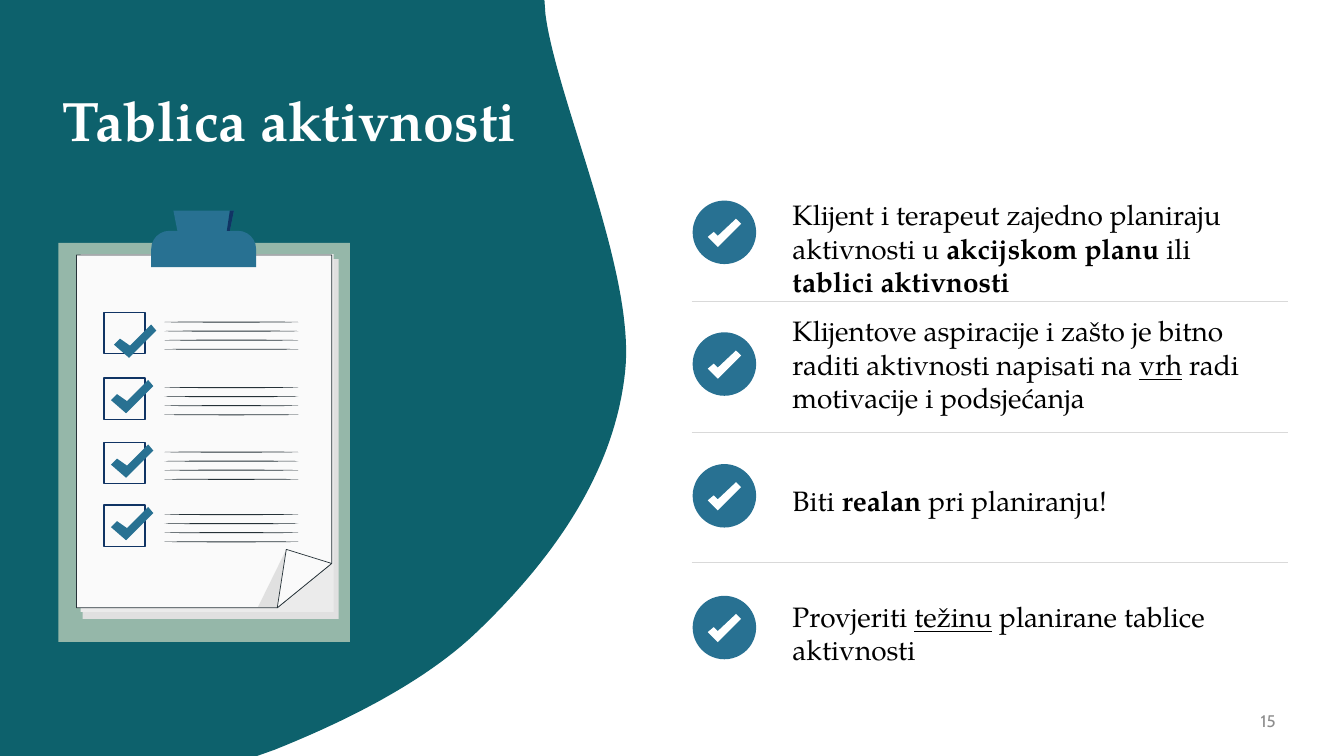
from lxml.etree import SubElement
from pptx import Presentation
from pptx.dml.color import RGBColor
from pptx.enum.shapes import MSO_CONNECTOR, MSO_SHAPE
from pptx.enum.text import MSO_ANCHOR, PP_ALIGN
from pptx.oxml.ns import qn
from pptx.util import Inches, Pt

TEAL, BLUE, NAVY, INK = "0D616C", "287192", "103464", "263238"
WHITE, PAPER = "FFFFFF", "FAFAFA"
SERIF = "TeX Gyre Pagella"


def paint(shape, fill=None, line=None, width=0.5):
    """Set fill and outline, with no shadow; None means no fill or no line."""
    shape.shadow.inherit = False
    if fill:
        shape.fill.solid()
        shape.fill.fore_color.rgb = RGBColor.from_string(fill)
    else:
        shape.fill.background()
    if line:
        shape.line.color.rgb = RGBColor.from_string(line)
        shape.line.width = Pt(width)
    else:
        shape.line.fill.background()


def add_polygon(shapes, points, fill, line=None, left=0, top=0):
    """Draw a closed outline from points in inches, moved by left and top."""
    corners = [(Inches(left + x), Inches(top + y)) for x, y in points]
    builder = shapes.build_freeform(*corners[0])
    builder.add_line_segments(corners[1:], close=True)
    paint(builder.convert_to_shape(), fill, line)


prs = Presentation()
prs.slide_width, prs.slide_height = Inches(13.33), Inches(7.5)
slide = prs.slides.add_slide(prs.slide_layouts[5])
shapes = slide.shapes

# Teal panel with a curved right edge
edge = [(0, 0), (5.4, 0), (5.41, 0.14)]
curves = [
    ((5.52, 0.99), (6.31, 2.71), (6.2, 3.69)),
    ((6.09, 4.74), (5.42, 5.61), (4.73, 6.27)),
    ((4.21, 6.77), (3.42, 7.16), (2.72, 7.44)),
]
STEPS = 40
for control_1, control_2, end in curves:
    start = edge[-1]
    for step in range(1, STEPS + 1):
        t = step / STEPS
        edge.append(tuple(
            (1 - t) ** 3 * a + 3 * (1 - t) ** 2 * t * b + 3 * (1 - t) * t ** 2 * c + t ** 3 * d
            for a, b, c, d in zip(start, control_1, control_2, end)))
add_polygon(shapes, edge + [(2.55, 7.5), (0, 7.5)], TEAL)

# Title, brought in front of the panel
title = shapes.title
shapes._spTree.append(title._element)
title.left, title.top, title.width, title.height = map(Inches, (0.52, 0.7, 4.83, 1.06))
title.text_frame.vertical_anchor = MSO_ANCHOR.MIDDLE
title.text_frame.word_wrap = True
heading = title.text_frame.paragraphs[0]
heading.alignment = PP_ALIGN.LEFT
heading.line_spacing = 0.9
run = heading.add_run()
run.text = "Tablica aktivnosti"
run.font.name, run.font.size, run.font.bold = SERIF, Pt(39.6), True
run.font.color.rgb = RGBColor.from_string(WHITE)

# Slide number
number = shapes.add_textbox(Inches(12.3), Inches(6.95), Inches(0.45), Inches(0.4)).text_frame
number.word_wrap = True
number.vertical_anchor = MSO_ANCHOR.MIDDLE
number.paragraphs[0].alignment = PP_ALIGN.RIGHT
run = number.paragraphs[0].add_run()
run.text = "15"
run.font.name, run.font.size = "Cabin", Pt(12)
run.font.color.rgb = RGBColor.from_string("8C8C8C")

# Checklist: text top, then runs with their emphasis
advice = [
    (2.03, [("Klijent i terapeut zajedno planiraju aktivnosti u ", ""), ("akcijskom planu ", "bold"),
            ("ili", ""), (" tablici aktivnosti", "bold")]),
    (3.18, [("Klijentove aspiracije i zašto je bitno raditi aktivnosti napisati na ", ""),
            ("vrh", "underline"), (" radi motivacije i podsjećanja", "")]),
    (4.53, [("Biti ", ""), ("realan", "bold"), (" pri planiranju!", "")]),
    (5.85, [("Provjeriti ", ""), ("težinu", "underline"), (" planirane tablice aktivnosti", "")]),
]
badge_tick = [(0.43, 0.18), (0.25, 0.35), (0.21, 0.31), (0.15, 0.36), (0.25, 0.46), (0.48, 0.23)]
for row, (text_top, parts) in enumerate(advice):
    badge_top = 1.99 + 1.307 * row
    badge = shapes.add_shape(MSO_SHAPE.OVAL, Inches(6.87), Inches(badge_top), Inches(0.63), Inches(0.63))
    paint(badge, BLUE)
    add_polygon(shapes, badge_tick, WHITE, left=6.87, top=badge_top)

    frame = shapes.add_textbox(Inches(7.86), Inches(text_top), Inches(4.8), Inches(0.86)).text_frame
    frame.word_wrap = True
    frame.vertical_anchor = MSO_ANCHOR.MIDDLE
    frame.margin_left = frame.margin_right = frame.margin_top = frame.margin_bottom = 0
    for text, emphasis in parts:
        run = frame.paragraphs[0].add_run()
        run.text = text
        run.font.name, run.font.size = SERIF, Pt(20)
        run.font.bold = emphasis == "bold"
        run.font.underline = emphasis == "underline"
        run.font.color.rgb = RGBColor.from_string("000000")

    if row < len(advice) - 1:
        y = Inches(2.99 + 1.295 * row)
        divider = shapes.add_connector(MSO_CONNECTOR.STRAIGHT, Inches(6.86), y, Inches(12.77), y)
        divider.line.color.rgb = RGBColor.from_string("D9D9D9")
        divider.line.width = Pt(0.5)
        SubElement(divider._element.spPr, qn("a:effectLst"))

# Clipboard with its sheets of paper
clipboard = shapes.add_group_shape().shapes
for left, top, width, height, fill in [
    (0.58, 2.41, 2.89, 3.96, "95B7A9"),
    (0.82, 2.57, 2.54, 3.57, "E0E0E0"),
    (0.8, 2.52, 2.51, 3.55, "EBEBEB"),
]:
    sheet = clipboard.add_shape(MSO_SHAPE.RECTANGLE, *map(Inches, (left, top, width, height)))
    paint(sheet, fill)
add_polygon(clipboard, [(0.76, 2.53), (3.29, 2.53), (3.29, 5.59), (2.75, 6.03), (0.76, 6.03)], PAPER, INK)
add_polygon(clipboard, [(2.84, 5.45), (2.56, 6.02), (2.75, 6.02)], "E0E0E0")
add_polygon(clipboard, [(2.75, 6.03), (2.84, 5.45), (3.29, 5.59)], PAPER, INK)

clip = clipboard.add_shape(MSO_SHAPE.ROUND_2_SAME_RECTANGLE, *map(Inches, (1.5, 2.29, 1.04, 0.36)))
clip.adjustments[0] = 0.5
paint(clip, BLUE)
add_polygon(clipboard, [(1.76, 2.29), (1.72, 2.09), (2.32, 2.09), (2.28, 2.29)], BLUE)
add_polygon(clipboard, [(2.32, 2.09), (2.28, 2.09), (2.25, 2.29), (2.28, 2.29)], NAVY)

# Ticked boxes with ruled lines; the first tick sits a little lower
box_tick = [(0.08, 0.23), (0.14, 0.17), (0.24, 0.24), (0.45, 0.03), (0.5, 0.09), (0.23, 0.36)]
for box_top, tick_right, tick_down in [(3.09, 0.03, 0.1), (3.74, 0, 0), (4.38, 0, 0), (5, 0, 0)]:
    box = clipboard.add_shape(
        MSO_SHAPE.RECTANGLE, Inches(1.03), Inches(box_top + 0.01), Inches(0.41), Inches(0.41))
    paint(box, line=NAVY, width=1)
    for rule in range(4):
        ruled_line = clipboard.add_shape(
            MSO_SHAPE.OVAL, Inches(1.63), Inches(box_top + 0.1 + 0.09 * rule), Inches(1.33), Inches(0.01))
        paint(ruled_line, INK)
    add_polygon(clipboard, box_tick, BLUE, left=1.02 + tick_right, top=box_top + tick_down)

prs.save("out.pptx")
